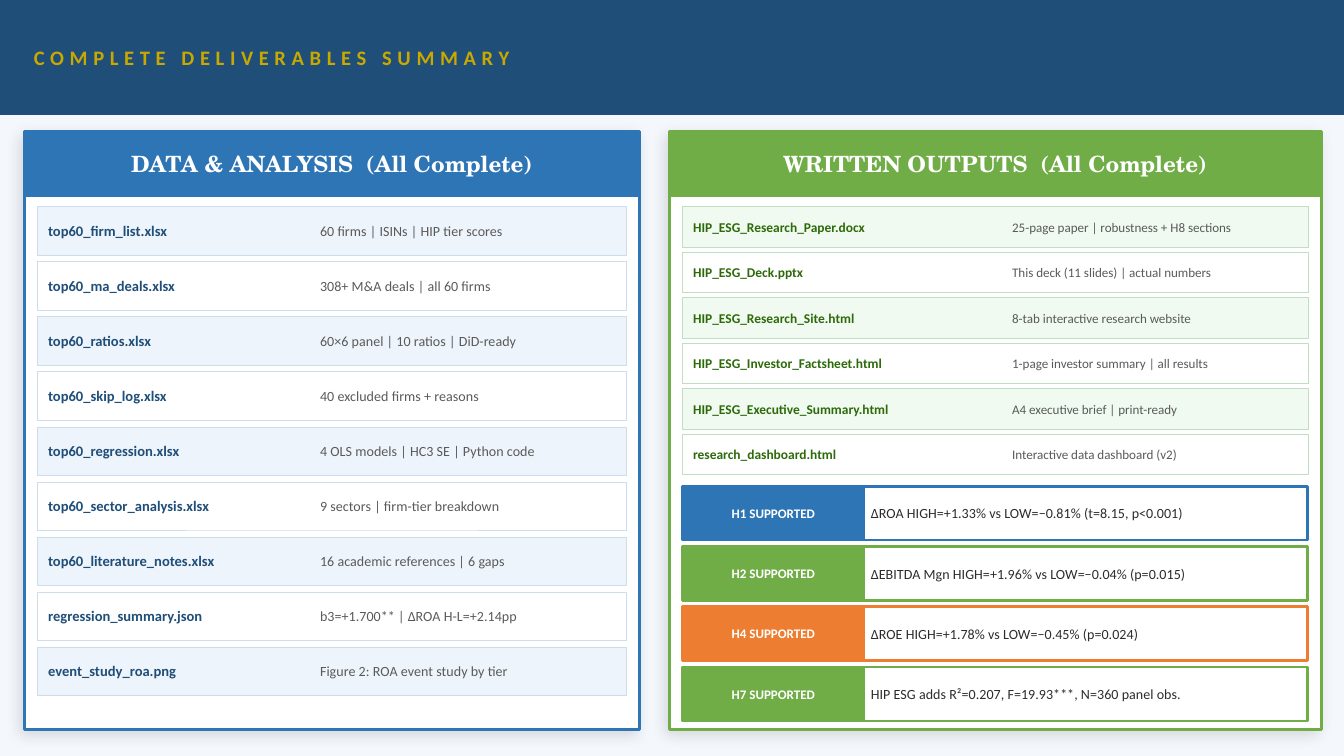
from dataclasses import dataclass
from typing import Optional

import pptx
import pptx.dml.color
import pptx.enum.shapes
import pptx.enum.text
import pptx.oxml
import pptx.oxml.ns
import pptx.util

Cm = pptx.util.Cm
Pt = pptx.util.Pt
PP_ALIGN = pptx.enum.text.PP_ALIGN


@dataclass(frozen=True)
class Theme:
    sans: str = "Calibri"
    serif: str = "TeX Gyre Schola"
    page: str = "F4F8FC"
    white: str = "FFFFFF"
    navy: str = "1F4E79"
    gold: str = "C9A800"
    blue: str = "2E75B6"
    green: str = "70AD47"
    orange: str = "ED7D31"
    dark_green: str = "2D6A0A"
    blue_tint: str = "EEF4FB"
    green_tint: str = "F0FAF0"
    blue_rule: str = "CCDDEE"
    green_rule: str = "C0DEC0"
    grey: str = "5A5A5A"
    ink: str = "2C2C2C"
    title_size: float = 11
    heading_size: float = 12
    badge_size: float = 7
    result_size: float = 7.5
    hairline: float = 0.4
    edge: float = 1
    frame: float = 1.5


T = Theme()


@dataclass(frozen=True)
class Style:
    size: float
    color: str
    bold: bool = False
    font: str = T.sans
    align: PP_ALIGN = PP_ALIGN.LEFT


@dataclass(frozen=True)
class Box:
    """A rectangle on the slide, in centimetres."""
    x: float
    y: float
    w: float
    h: float


@dataclass(frozen=True)
class Deliverable:
    file: str
    detail: str


@dataclass(frozen=True)
class Panel:
    heading: str
    box: Box
    color: str
    tint: str
    rule: str
    row_h: float
    pitch: float
    file_w: float
    detail_x: float
    detail_w: float
    file_style: Style
    detail_style: Style
    items: tuple[Deliverable, ...]


@dataclass(frozen=True)
class Verdict:
    label: str
    result: str
    color: str


TITLE = Style(T.title_size, T.gold, bold=True)
HEADING = Style(T.heading_size, T.white, True, T.serif, PP_ALIGN.CENTER)
BADGE = Style(T.badge_size, T.white, bold=True, align=PP_ALIGN.CENTER)
RESULT = Style(T.result_size, T.ink)

HEADER = Box(0, 0, 25.4, 2.16)
HEADING_H = 1.22
ROWS_Y = 3.91
PAD = 0.25      # panel edge to row
INDENT = 0.2    # row edge to file name
VERDICT_BOX = Box(12.9, 9.19, 11.81, 1.02)
VERDICT_PITCH = 1.14
BADGE_W = 3.43
RESULT_GAP = 0.13

PANELS = (
    Panel("DATA & ANALYSIS  (All Complete)", Box(0.46, 2.49, 11.63, 11.3),
          T.blue, T.blue_tint, T.blue_rule, 0.91, 1.04, 5.08, 6.05, 5.54,
          Style(7.8, T.navy, bold=True), Style(7.5, T.grey), (
        Deliverable("top60_firm_list.xlsx", "60 firms | ISINs | HIP tier scores"),
        Deliverable("top60_ma_deals.xlsx", "308+ M&A deals | all 60 firms"),
        Deliverable("top60_ratios.xlsx", "60×6 panel | 10 ratios | DiD-ready"),
        Deliverable("top60_skip_log.xlsx", "40 excluded firms + reasons"),
        Deliverable("top60_regression.xlsx", "4 OLS models | HC3 SE | Python code"),
        Deliverable("top60_sector_analysis.xlsx", "9 sectors | firm-tier breakdown"),
        Deliverable("top60_literature_notes.xlsx", "16 academic references | 6 gaps"),
        Deliverable("regression_summary.json", "b3=+1.700** | ΔROA H-L=+2.14pp"),
        Deliverable("event_study_roa.png", "Figure 2: ROA event study by tier"),
    )),
    Panel("WRITTEN OUTPUTS  (All Complete)", Box(12.65, 2.49, 12.32, 11.3),
          T.green, T.green_tint, T.green_rule, 0.76, 0.86, 5.97, 19.13, 5.33,
          Style(7.2, T.dark_green, bold=True), Style(7, T.grey), (
        Deliverable("HIP_ESG_Research_Paper.docx", "25-page paper | robustness + H8 sections"),
        Deliverable("HIP_ESG_Deck.pptx", "This deck (11 slides) | actual numbers"),
        Deliverable("HIP_ESG_Research_Site.html", "8-tab interactive research website"),
        Deliverable("HIP_ESG_Investor_Factsheet.html", "1-page investor summary | all results"),
        Deliverable("HIP_ESG_Executive_Summary.html", "A4 executive brief | print-ready"),
        Deliverable("research_dashboard.html", "Interactive data dashboard (v2)"),
    )),
)

VERDICTS = (
    Verdict("H1 SUPPORTED", "ΔROA HIGH=+1.33% vs LOW=−0.81% (t=8.15, p<0.001)", T.blue),
    Verdict("H2 SUPPORTED", "ΔEBITDA Mgn HIGH=+1.96% vs LOW=−0.04% (p=0.015)", T.green),
    Verdict("H4 SUPPORTED", "ΔROE HIGH=+1.78% vs LOW=−0.45% (p=0.024)", T.orange),
    Verdict("H7 SUPPORTED", "HIP ESG adds R²=0.207, F=19.93***, N=360 panel obs.", T.green),
)


def rgb(color: str) -> pptx.dml.color.RGBColor:
    return pptx.dml.color.RGBColor.from_string(color)


def place(box: Box) -> tuple[int, int, int, int]:
    return Cm(box.x), Cm(box.y), Cm(box.w), Cm(box.h)


def write(sp, text: str, style: Style) -> None:
    tf = sp.text_frame
    tf.word_wrap = True
    tf.auto_size = pptx.enum.text.MSO_AUTO_SIZE.NONE
    tf.vertical_anchor = pptx.enum.text.MSO_ANCHOR.MIDDLE
    tf.margin_left = tf.margin_top = tf.margin_right = tf.margin_bottom = 0
    p = tf.paragraphs[0]
    p.text = text
    p.alignment = style.align
    p.font.name = style.font
    p.font.size = Pt(style.size)
    p.font.bold = style.bold
    p.font.color.rgb = rgb(style.color)


def add_text(s, box: Box, text: str, style: Style) -> None:
    write(s.shapes.add_textbox(*place(box)), text, style)


def add_rect(s, box: Box, fill: str, line: str, width: float,
             text: Optional[str] = None, style: Style = HEADING):
    sp = s.shapes.add_shape(pptx.enum.shapes.MSO_SHAPE.RECTANGLE, *place(box))
    sp.shadow.inherit = False
    sp.fill.solid()
    sp.fill.fore_color.rgb = rgb(fill)
    sp.line.color.rgb = rgb(line)
    sp.line.width = Pt(width)
    if text:
        write(sp, text, style)
    return sp


def add_shadow(sp) -> None:
    effects = sp._element.spPr.find(pptx.oxml.ns.qn("a:effectLst"))
    effects.append(pptx.oxml.parse_xml(
        f'<a:outerShdw {pptx.oxml.ns.nsdecls("a")} blurRad="{Pt(8)}" dist="{Pt(3)}" '
        'dir="8100000" algn="bl" rotWithShape="0">'
        '<a:srgbClr val="000000"><a:alpha val="12000"/></a:srgbClr></a:outerShdw>'))


def draw_header(s) -> None:
    add_rect(s, HEADER, T.navy, T.navy, T.edge)
    title = s.shapes.title
    title.left, title.top, title.width, title.height = place(Box(0.64, 0, 24.13, HEADER.h))
    write(title, "COMPLETE DELIVERABLES SUMMARY", TITLE)
    # Letter spacing, and the title brought in front of its band
    title.text_frame.paragraphs[0].runs[0]._r.get_or_add_rPr().set("spc", "300")
    s.shapes._spTree.append(title._element)


def draw_panel(s, panel: Panel) -> None:
    b = panel.box
    add_shadow(add_rect(s, b, T.white, panel.color, T.frame))
    add_rect(s, Box(b.x, b.y, b.w, HEADING_H), panel.color, panel.color, T.edge, panel.heading)
    for i, item in enumerate(panel.items):
        row = Box(b.x + PAD, ROWS_Y + i * panel.pitch, b.w - 2 * PAD, panel.row_h)
        add_rect(s, row, T.white if i % 2 else panel.tint, panel.rule, T.hairline)
        add_text(s, Box(row.x + INDENT, row.y, panel.file_w, row.h), item.file, panel.file_style)
        add_text(s, Box(panel.detail_x, row.y, panel.detail_w, row.h),
                 item.detail, panel.detail_style)


def draw_verdict(s, i: int, verdict: Verdict) -> None:
    v = VERDICT_BOX
    y = v.y + i * VERDICT_PITCH
    add_rect(s, Box(v.x, y, v.w, v.h), T.white, verdict.color, T.frame)
    add_rect(s, Box(v.x, y, BADGE_W, v.h), verdict.color, verdict.color, T.edge,
             verdict.label, BADGE)
    add_text(s, Box(v.x + BADGE_W + RESULT_GAP, y, 8.13, v.h), verdict.result, RESULT)


def main() -> None:
    prs = pptx.Presentation()
    prs.slide_width, prs.slide_height = Cm(25.4), Cm(14.29)
    s = prs.slides.add_slide(prs.slide_layouts[5])
    s.background.fill.solid()
    s.background.fill.fore_color.rgb = rgb(T.page)

    draw_header(s)
    for panel in PANELS:
        draw_panel(s, panel)
    for i, verdict in enumerate(VERDICTS):
        draw_verdict(s, i, verdict)
    prs.save("out.pptx")


if __name__ == "__main__":
    main()
